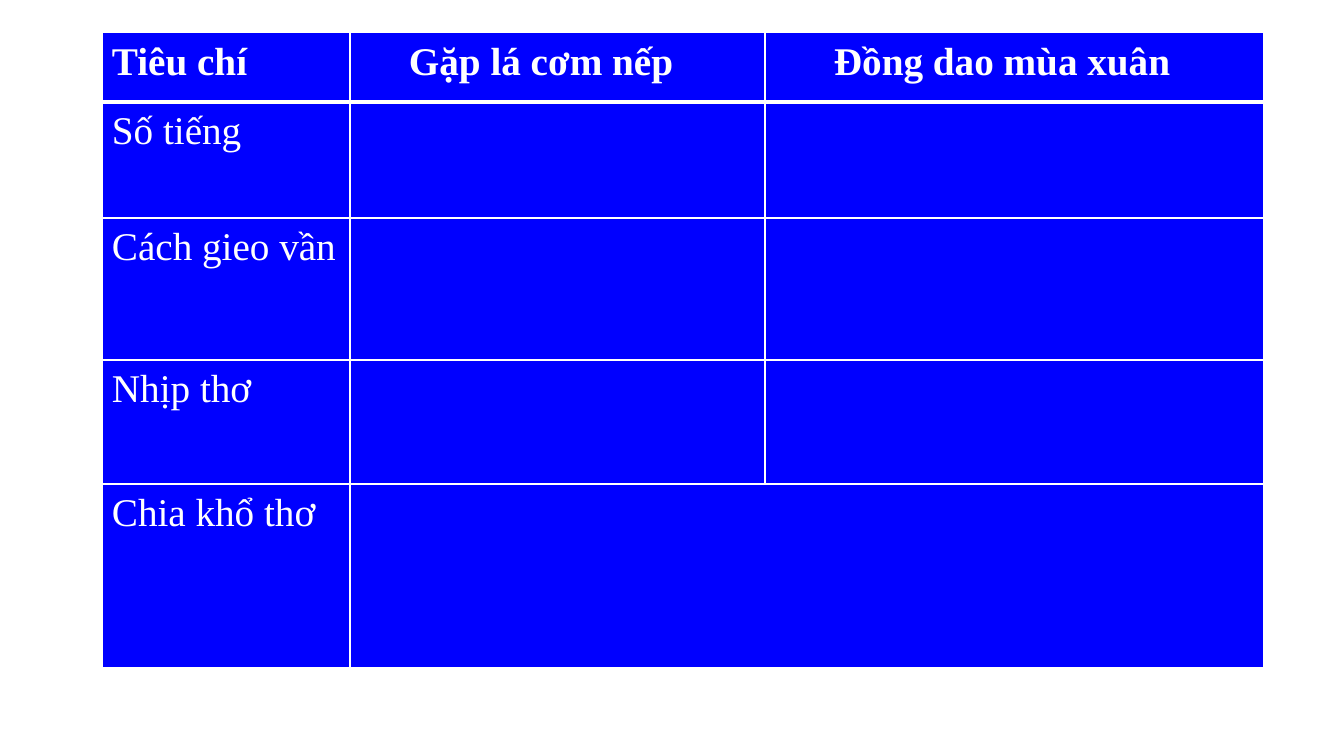
"""Build a slide with a table for comparing two poems."""
from lxml import etree
from pptx import Presentation
from pptx.dml.color import RGBColor
from pptx.oxml.ns import qn
from pptx.util import Pt

HEADS = ["Tiêu chí", "Gặp lá cơm nếp", "Đồng dao mùa xuân"]
LABELS = ["Số tiếng", "Cách gieo vần", "Nhịp thơ", "Chia khổ thơ"]
INSETS = [10, 59, 69]
WIDTHS = [248, 415, 499]
HEIGHTS = [70, 116, 142, 124, 184]
LEFT, TOP = 102, 32
BLUE, WHITE = "0000FF", "FFFFFF"
FONT = "Times New Roman"
THIN, THICK = 1, 3


def px(n):
    return round(n * 914400 / 100.8)


def color(code):
    return RGBColor.from_string(code)


def write(cell, text, size=28, bold=False, inset=10):
    cell.margin_left = px(inset)
    para = cell.text_frame.paragraphs[0]
    para.line_spacing = 1.07
    run = para.add_run()
    run.text = text
    font = run.font
    font.name, font.size, font.bold = FONT, Pt(size), bold
    font.color.rgb = color(WHITE)


def border(cell, top, bottom):
    props = cell._tc.get_or_add_tcPr()
    sides = [("L", THIN), ("R", THIN), ("T", top), ("B", bottom)]
    for i, (side, width) in enumerate(sides):
        line = etree.Element(qn(f"a:ln{side}"), w=str(Pt(width)))
        fill = etree.SubElement(line, qn("a:solidFill"))
        etree.SubElement(fill, qn("a:srgbClr"), val=WHITE)
        props.insert(i, line)


def main():
    deck = Presentation()
    deck.slide_width, deck.slide_height = px(1344), px(756)
    slide = deck.slides.add_slide(deck.slide_layouts[6])
    table = slide.shapes.add_table(
        len(HEIGHTS), len(WIDTHS), px(LEFT), px(TOP),
        px(sum(WIDTHS)), px(sum(HEIGHTS))).table
    for col, width in zip(table.columns, WIDTHS):
        col.width = px(width)
    for r, height in enumerate(HEIGHTS):
        table.rows[r].height = px(height)
        for cell in table.rows[r].cells:
            cell.fill.solid()
            cell.fill.fore_color.rgb = color(BLUE)
            border(cell, THICK if r == 1 else THIN, THICK if r == 0 else THIN)
    for c, (head, inset) in enumerate(zip(HEADS, INSETS)):
        write(table.cell(0, c), head, bold=True, inset=inset)
    for r, label in enumerate(LABELS, 1):
        write(table.cell(r, 0), label)
    last = len(LABELS)
    table.cell(last, 1).merge(table.cell(last, 2))
    deck.save("out.pptx")


if __name__ == "__main__":
    main()
